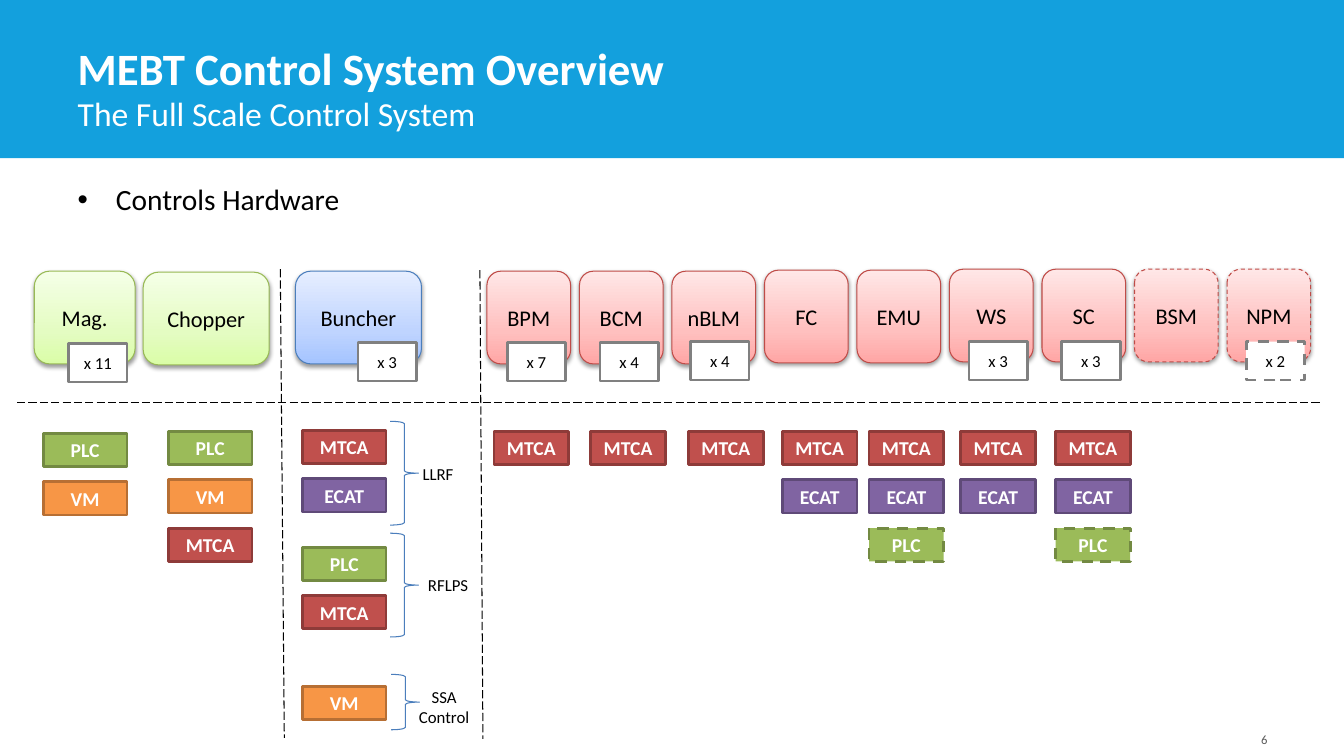
from lxml.etree import SubElement
from pptx import Presentation
from pptx.dml.color import RGBColor
from pptx.enum.dml import MSO_LINE
from pptx.enum.shapes import MSO_CONNECTOR, MSO_SHAPE
from pptx.enum.text import MSO_ANCHOR, MSO_AUTO_SIZE, PP_ALIGN
from pptx.oxml.ns import qn
from pptx.util import Inches, Pt

FONT = "Calibri"
WHITE = RGBColor(0xFF, 0xFF, 0xFF)
BLACK = RGBColor(0x00, 0x00, 0x00)
BANNER_BLUE = RGBColor(0x13, 0xA0, 0xDD)
COUNT_GREY = RGBColor(0x80, 0x80, 0x80)
NUMBER_GREY = RGBColor(0x59, 0x59, 0x59)
BRACE_BLUE = RGBColor(0x4B, 0x7E, 0xBC)

# Outline, then gradient colours from bottom to top
GREEN = (RGBColor(0x98, 0xB9, 0x55), ("DAFDA7", "E4FCC2", "F5FFE7"))
BLUE = (BRACE_BLUE, ("A4C4FF", "BFD4FF", "E6EEFF"))
RED = (RGBColor(0xBF, 0x4C, 0x48), ("FFA6A5", "FFC0BF", "FFE7E7"))
GRADIENT_STOPS = (0, 35000, 100000)

# Fill and outline of each hardware type
HARDWARE = {
    "MTCA": (RGBColor(0xC0, 0x50, 0x4D), RGBColor(0x8E, 0x3B, 0x39)),
    "ECAT": (RGBColor(0x80, 0x64, 0xA2), RGBColor(0x5F, 0x4A, 0x78)),
    "PLC": (RGBColor(0x9B, 0xBB, 0x59), RGBColor(0x73, 0x8A, 0x42)),
    "VM": (RGBColor(0xF7, 0x96, 0x46), RGBColor(0xB7, 0x6F, 0x34)),
}
TILE_PITCH = 0.48

# Label, left, top, width, palette
MAIN_SYSTEMS = [
    ("Mag.", 0.34, 2.69, 1, GREEN),
    ("Chopper", 1.42, 2.7, 1.25, GREEN),
    ("Buncher", 2.93, 2.69, 1.25, BLUE),
]
DIAGNOSTICS = [
    ("BPM", 2.69), ("BCM", 2.69), ("nBLM", 2.69),
    ("FC", 2.68), ("EMU", 2.68),
    ("WS", 2.67), ("SC", 2.67), ("BSM", 2.67), ("NPM", 2.67),
]
PLANNED_SYSTEMS = ("BSM", "NPM")

# Text, left, top
COUNTS = [
    ("x 11", 0.68, 3.41), ("x 3", 3.55, 3.4), ("x 7", 5.03, 3.4),
    ("x 4", 5.95, 3.4), ("x 4", 6.85, 3.39), ("x 3", 9.61, 3.39),
    ("x 3", 10.53, 3.39), ("x 2", 12.36, 3.39),
]

# Left, top, tile width, hardware from top to bottom; * marks a planned item
HARDWARE_STACKS = [
    (0.43, 4.3, 0.83, "PLC VM"),
    (1.67, 4.28, 0.83, "PLC VM MTCA"),
    (3, 4.27, 0.83, "MTCA ECAT"),
    (3, 5.43, 0.83, "PLC MTCA"),
    (3, 6.81, 0.83, "VM"),
    (4.9, 4.28, 0.74, "MTCA"),
    (5.86, 4.28, 0.74, "MTCA"),
    (6.83, 4.28, 0.74, "MTCA"),
    (7.76, 4.28, 0.74, "MTCA ECAT"),
    (8.62, 4.28, 0.74, "MTCA ECAT PLC*"),
    (9.53, 4.28, 0.74, "MTCA ECAT"),
    (10.47, 4.28, 0.74, "MTCA ECAT PLC*"),
]

GROUP_LABELS = [
    (["LLRF"], (4.08, 4.51, 0.53, 0.38)),
    (["RFLPS"], (4.11, 5.61, 0.67, 0.38)),
    (["SSA", "Control"], (4.03, 6.7, 0.75, 0.63)),
]
BRACES = [(3.87, 4.18, 0.28, 1.03), (3.87, 5.29, 0.28, 1.03), (3.88, 6.69, 0.28, 0.55)]
DIVIDERS = [(0.17, 3.99, 13.09, 3.99), (4.76, 2.68, 4.79, 7.33), (2.78, 2.67, 2.82, 7.32)]


def write(paragraph, text, size, color, bold=False, align=PP_ALIGN.CENTER):
    paragraph.alignment = align
    run = paragraph.add_run()
    run.text = text
    run.font.name = FONT
    run.font.size = Pt(size)
    run.font.color.rgb = color
    run.font.bold = bold


def add_box(slide, box, kind=MSO_SHAPE.RECTANGLE, fill=None, outline=None, weight=2, dashed=False):
    shape = slide.shapes.add_shape(kind, *map(Inches, box))
    shape.shadow.inherit = False
    if fill is None:
        shape.fill.background()
    else:
        shape.fill.solid()
        shape.fill.fore_color.rgb = fill
    if outline is None:
        shape.line.fill.background()
    else:
        shape.line.color.rgb = outline
        shape.line.width = Pt(weight)
        if dashed:
            shape.line.dash_style = MSO_LINE.DASH
    return shape


def label(shape, lines, size, color=BLACK, bold=False):
    frame = shape.text_frame
    frame.word_wrap = False
    frame.vertical_anchor = MSO_ANCHOR.MIDDLE
    for index, line in enumerate(lines):
        paragraph = frame.add_paragraph() if index else frame.paragraphs[0]
        write(paragraph, line, size, color, bold)


def add_system(slide, name, left, top, width, palette):
    """Draw a rounded box with a three-stop gradient and a soft shadow."""
    outline, colors = palette
    shape = add_box(slide, (left, top, width, 0.92), MSO_SHAPE.ROUNDED_RECTANGLE,
                    outline=outline, weight=0.75, dashed=name in PLANNED_SYSTEMS)
    shape.fill.gradient()
    properties = shape.element.spPr
    gradient = properties.find(qn("a:gradFill"))
    for child in list(gradient):
        gradient.remove(child)
    stops = SubElement(gradient, qn("a:gsLst"))
    for position, color in zip(GRADIENT_STOPS, colors):
        stop = SubElement(stops, qn("a:gs"), pos=str(position))
        SubElement(stop, qn("a:srgbClr"), val=color)
    SubElement(gradient, qn("a:lin"), ang="16200000", scaled="0")
    shadow = SubElement(properties.find(qn("a:effectLst")), qn("a:outerShdw"),
                        blurRad="40000", dist="20000", dir="5400000", rotWithShape="0")
    shadow_color = SubElement(shadow, qn("a:srgbClr"), val="000000")
    SubElement(shadow_color, qn("a:alpha"), val="38000")
    label(shape, [name], 16)


def add_stack(slide, left, top, width, items):
    for row, item in enumerate(items.split()):
        name = item.rstrip("*")
        fill, outline = HARDWARE[name]
        tile = add_box(slide, (left, top + row * TILE_PITCH, width, 0.33),
                       fill=fill, outline=outline, dashed=item.endswith("*"))
        label(tile, [name], 14, WHITE, bold=True)


def add_divider(slide, *ends):
    divider = slide.shapes.add_connector(MSO_CONNECTOR.STRAIGHT, *map(Inches, ends))
    divider.line.color.rgb = BLACK
    divider.line.width = Pt(0.75)
    divider.line.dash_style = MSO_LINE.LONG_DASH
    SubElement(divider.element.spPr, qn("a:effectLst"))


def place_text(holder, box, text, size, color, anchor=MSO_ANCHOR.TOP, bold=False,
               align=PP_ALIGN.LEFT, bullet=None):
    holder.left, holder.top, holder.width, holder.height = map(Inches, box)
    frame = holder.text_frame
    frame.word_wrap = True
    frame.auto_size = MSO_AUTO_SIZE.NONE
    frame.vertical_anchor = anchor
    paragraph = frame.paragraphs[0]
    properties = paragraph._p.get_or_add_pPr()
    indent = Inches(0.38) if bullet else 0
    properties.set("marL", str(indent))
    properties.set("indent", str(-indent))
    if bullet:
        SubElement(properties, qn("a:buFont"), typeface="Arial")
        SubElement(properties, qn("a:buChar"), char=bullet)
    else:
        SubElement(properties, qn("a:buNone"))
    paragraph.space_before = Pt(0)
    write(paragraph, text, size, color, bold, align)


def add_heading(slide):
    banner = add_box(slide, (0, 0, 13.33, 1.57), fill=BANNER_BLUE)
    slide.shapes.element.insert(2, banner.element)
    title, body, subtitle = slide.placeholders
    place_text(title, (0.67, 0.38, 10.41, 0.61), "MEBT Control System Overview",
               32, WHITE, MSO_ANCHOR.BOTTOM, bold=True)
    place_text(body, (0.67, 1.75, 12, 4.95), "Controls Hardware", 21, BLACK, bullet="•")
    place_text(subtitle, (0.67, 0.87, 10.41, 0.65), "The Full Scale Control System", 24, WHITE)
    number = slide.shapes.add_textbox(0, 0, 0, 0)
    place_text(number, (9.56, 7.06, 3.11, 0.4), "6", 9, NUMBER_GREY,
               MSO_ANCHOR.BOTTOM, align=PP_ALIGN.RIGHT)


def main():
    deck = Presentation()
    deck.slide_width, deck.slide_height = Inches(13.33), Inches(7.5)
    slide = deck.slides.add_slide(deck.slide_layouts.get_by_name("Two Content"))
    add_heading(slide)
    for system in MAIN_SYSTEMS:
        add_system(slide, *system)
    for column, (name, top) in enumerate(DIAGNOSTICS):
        add_system(slide, name, 4.83 + column * 0.9175, top, 0.83, RED)
    for text, left, top in COUNTS:
        count = add_box(slide, (left, top, 0.58, 0.38), fill=WHITE,
                        outline=COUNT_GREY, dashed=text == "x 2")
        label(count, [text], 12)
    for stack in HARDWARE_STACKS:
        add_stack(slide, *stack)
    for lines, box in GROUP_LABELS:
        label(add_box(slide, box, fill=WHITE), lines, 12)
    for box in BRACES:
        add_box(slide, box, MSO_SHAPE.RIGHT_BRACE, outline=BRACE_BLUE, weight=0.75)
    for ends in DIVIDERS:
        add_divider(slide, *ends)
    deck.save("out.pptx")


if __name__ == "__main__":
    main()
